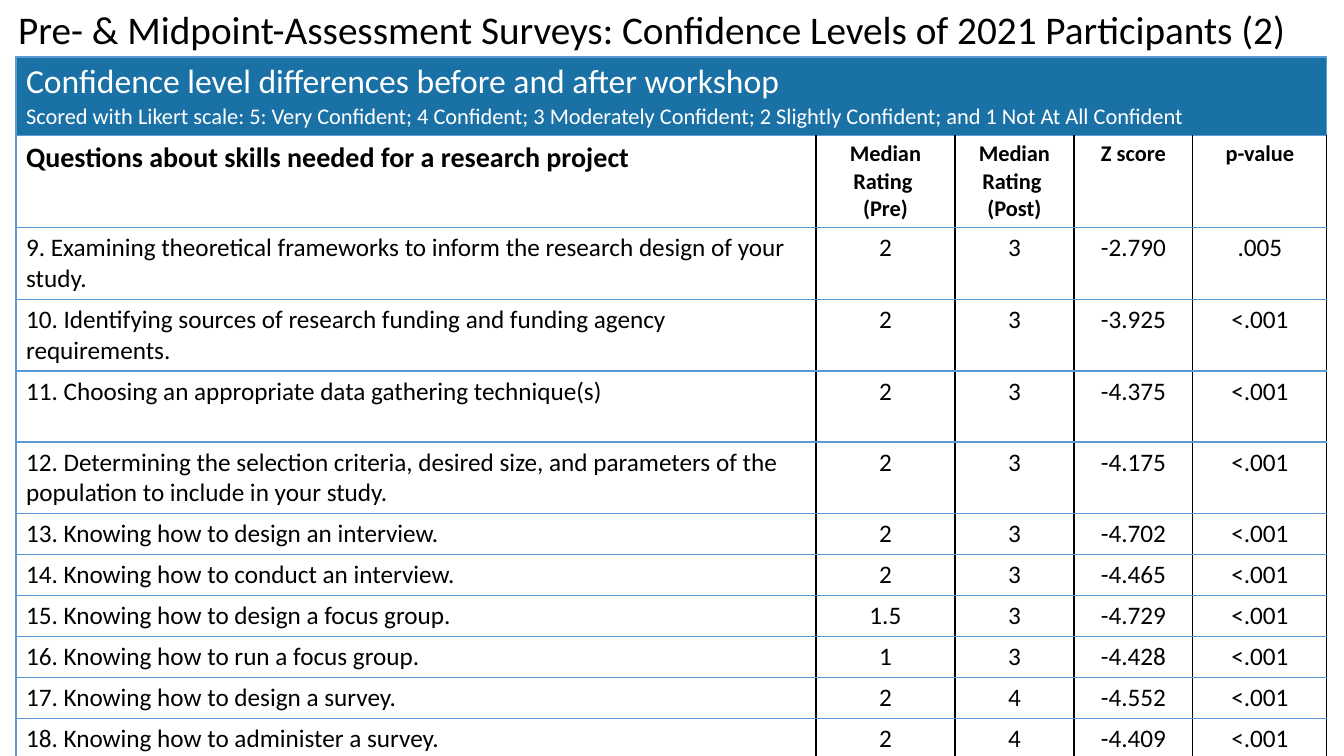
from lxml import etree
from pptx import Presentation
from pptx.dml.color import RGBColor
from pptx.enum.text import MSO_ANCHOR, MSO_AUTO_SIZE, PP_ALIGN
from pptx.oxml.ns import qn
from pptx.util import Pt

TOP, NO_FIT = MSO_ANCHOR.TOP, MSO_AUTO_SIZE.NONE
LEFT, CENTER = PP_ALIGN.LEFT, PP_ALIGN.CENTER
FONT = "Calibri"
BLACK, WHITE, NAVY, BLUE = "000000", "FFFFFF", "1A71A6", "5B9BD5"

TITLE = "Pre- & Midpoint-Assessment Surveys: Confidence Levels of 2021 Participants (2) "
BANNER = [
    ("Confidence level differences before and after workshop", 24),
    ("Scored with Likert scale: 5: Very Confident; 4 Confident; 3 Moderately Confident; "
     "2 Slightly Confident; and 1 Not At All Confident", 16),
]
HEADINGS = [
    ["Questions about skills needed for a research project"],
    ["Median Rating ", "(Pre)"],
    ["Median Rating ", "(Post)"],
    ["Z score"],
    ["p-value"],
]
FIRST_QUESTION = 9
RESULTS = [
    ("Examining theoretical frameworks to inform the research design of your study.",
     "2", "3", "-2.790", ".005"),
    ("Identifying sources of research funding and funding agency requirements.",
     "2", "3", "-3.925", "<.001"),
    ("Choosing an appropriate data gathering technique(s)", "2", "3", "-4.375", "<.001"),
    ("Determining the selection criteria, desired size, and parameters of the population "
     "to include in your study.", "2", "3", "-4.175", "<.001"),
    ("Knowing how to design an interview.", "2", "3", "-4.702", "<.001"),
    ("Knowing how to conduct an interview.", "2", "3", "-4.465", "<.001"),
    ("Knowing how to design a focus group.", "1.5", "3", "-4.729", "<.001"),
    ("Knowing how to run a focus group.", "1", "3", "-4.428", "<.001"),
    ("Knowing how to design a survey.", "2", "4", "-4.552", "<.001"),
    ("Knowing how to administer a survey.", "2", "4", "-4.409", "<.001"),
]
COL_WIDTHS = [800, 139, 119, 119, 134]
ROW_HEIGHTS = [78, 90] + [71, 70, 71, 71] + [40, 40, 41, 40, 41, 40]


def px(n):
    """Turn pixels, 100.8 to the inch, into EMU."""
    return round(n * 914400 / 100.8)


def rgb(color):
    return RGBColor.from_string(color)


def write(tf, lines, color=BLACK, bold=False, align=LEFT):
    """Fill a text frame with one paragraph per (text, size) pair."""
    for i, (text, size) in enumerate(lines):
        p = tf.paragraphs[0] if i == 0 else tf.add_paragraph()
        p.text = text
        p.alignment = align
        p.font.name = FONT
        p.font.size = Pt(size)
        p.font.bold = bold
        p.font.color.rgb = rgb(color)


def set_borders(cell, left, right):
    """Draw 1 pt edges: blue above and below, given colours at the sides."""
    tc_pr = cell._tc.get_or_add_tcPr()
    edges = [("a:lnL", left), ("a:lnR", right), ("a:lnT", BLUE), ("a:lnB", BLUE)]
    for i, (tag, color) in enumerate(edges):
        ln = etree.Element(qn(tag), w=str(Pt(1)))
        fill = etree.SubElement(ln, qn("a:solidFill"))
        etree.SubElement(fill, qn("a:srgbClr"), val=color)
        tc_pr.insert(i, ln)


def add_results_table(s):
    frame = s.shapes.add_table(len(ROW_HEIGHTS), len(COL_WIDTHS), px(16), px(57),
                               px(sum(COL_WIDTHS)), px(sum(ROW_HEIGHTS)))
    table = frame.table
    table.first_row = table.horz_banding = False
    for col, width in zip(table.columns, COL_WIDTHS):
        col.width = px(width)
    for row, height in zip(table.rows, ROW_HEIGHTS):
        row.height = px(height)

    banner = table.cell(0, 0)
    banner.merge(table.cell(0, len(COL_WIDTHS) - 1))
    write(banner.text_frame, BANNER, WHITE)
    for cell in table.rows[0].cells:
        cell.fill.solid()
        cell.fill.fore_color.rgb = rgb(NAVY)
        set_borders(cell, BLUE, BLUE)

    body = [[[(line, 16 if c else 20) for line in lines] for c, lines in enumerate(HEADINGS)]]
    for number, (question, *values) in enumerate(RESULTS, FIRST_QUESTION):
        body.append([[(text, 18)] for text in (f"{number}. {question}", *values)])
    for r, row in enumerate(body, 1):
        for c, lines in enumerate(row):
            cell = table.cell(r, c)
            cell.fill.background()
            write(cell.text_frame, lines, bold=r == 1, align=CENTER if c else LEFT)
            set_borders(cell, BLACK if c else BLUE, BLACK)


def add_title(s):
    title = s.shapes.title
    title.left, title.top, title.width, title.height = px(0), px(0), px(1312), px(57)
    tf = title.text_frame
    tf.word_wrap = True
    tf.auto_size = NO_FIT
    tf.vertical_anchor = TOP
    write(tf, [(TITLE, 28)], align=CENTER)


def main():
    prs = Presentation()
    prs.slide_width, prs.slide_height = px(1344), px(756)
    s = prs.slides.add_slide(prs.slide_layouts[5])
    add_title(s)
    add_results_table(s)
    prs.save("out.pptx")


if __name__ == "__main__":
    main()
